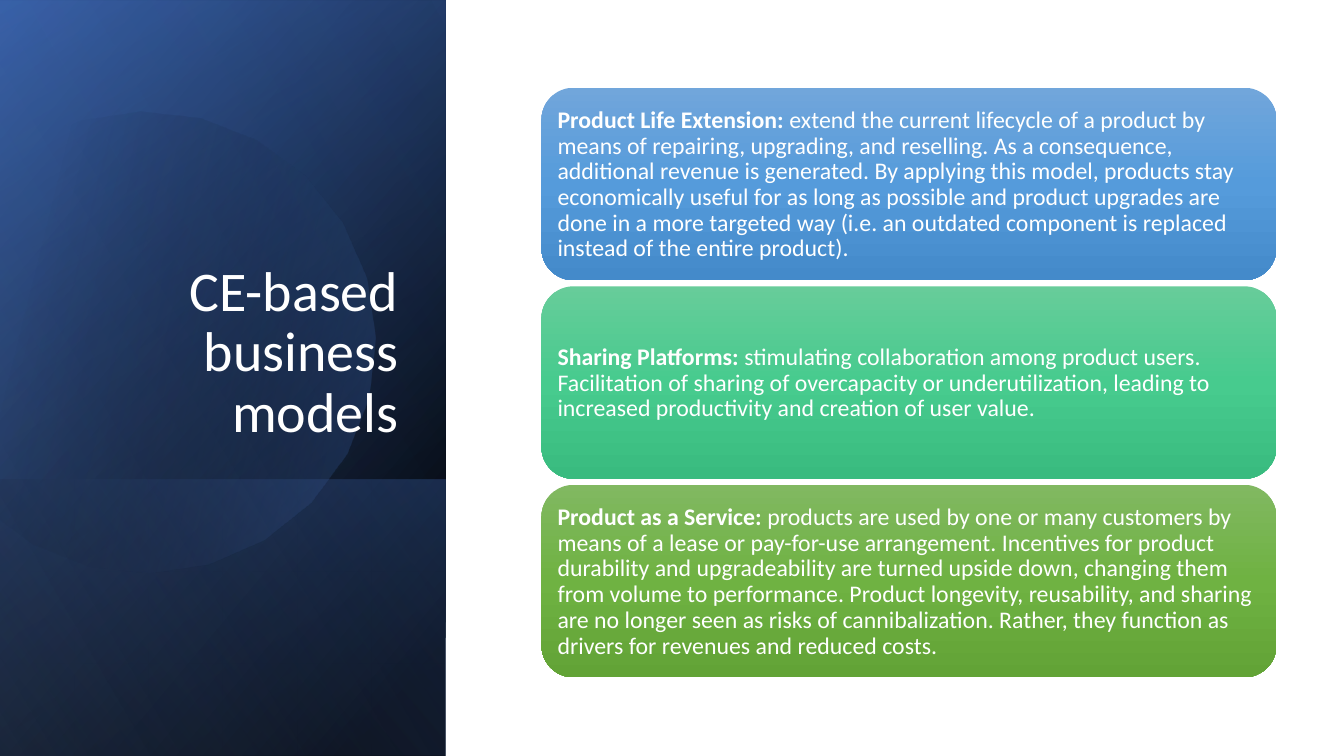
"""Build the slide on CE-based business models."""
from math import cos, radians, sin

from lxml.etree import SubElement
from pptx import Presentation
from pptx.dml.color import RGBColor
from pptx.enum.shapes import MSO_SHAPE as Preset
from pptx.enum.text import MSO_ANCHOR as Anchor, MSO_AUTO_SIZE as AutoSize, PP_ALIGN as Align
from pptx.oxml.ns import qn
from pptx.util import Inches, Pt

BLACK = RGBColor(0x00, 0x00, 0x00)
WHITE = RGBColor(0xFF, 0xFF, 0xFF)
NAVY = RGBColor(0x2F, 0x55, 0x97)
BLUE = RGBColor(0x44, 0x72, 0xC4)
PALE_BLUE = RGBColor(0x8F, 0xAA, 0xDC)
SKY_TONES = [RGBColor(0x71, 0xA6, 0xDB), RGBColor(0x55, 0x9B, 0xDB), RGBColor(0x44, 0x8A, 0xCA)]
MINT_TONES = [RGBColor(0x67, 0xCC, 0x9A), RGBColor(0x47, 0xCB, 0x8E), RGBColor(0x39, 0xBB, 0x7F)]
LEAF_TONES = [RGBColor(0x81, 0xB8, 0x61), RGBColor(0x6F, 0xB2, 0x42), RGBColor(0x62, 0xA3, 0x36)]
FONT = "Calibri"


def paint_gradient(shape, stops, angle):
    """Fill with (position, colour, opacity) stops, all in percent."""
    shape.shadow.inherit = False
    shape.line.fill.background()
    shape.fill.background()
    properties = shape.element.spPr
    blank = properties.find(qn("a:noFill"))
    gradient = SubElement(properties, qn("a:gradFill"), rotWithShape="1")
    properties.replace(blank, gradient)
    stop_list = SubElement(gradient, qn("a:gsLst"))
    for position, colour, opacity in stops:
        stop = SubElement(stop_list, qn("a:gs"), pos=str(position * 1000))
        tint = SubElement(stop, qn("a:srgbClr"), val=str(colour))
        if opacity < 100:
            SubElement(tint, qn("a:alpha"), val=str(opacity * 1000))
    SubElement(gradient, qn("a:lin"), ang=str(angle * 60000), scaled="0")


def add_panel(page, left, top, width, stops, angle):
    """Add a flipped rectangle turned upright over the left side."""
    panel = page.shapes.add_shape(
        Preset.RECTANGLE, Inches(left), Inches(top), Inches(width), Inches(4.42))
    panel.rotation = 90
    panel.element.spPr.find(qn("a:xfrm")).set("flipH", "1")
    paint_gradient(panel, stops, angle)


deck = Presentation()
deck.slide_width, deck.slide_height = Inches(13.33), Inches(7.5)
page = deck.slides.add_slide(deck.slide_layouts[5])

add_panel(page, -1.54, 1.54, 7.5, [(8, BLACK, 100), (100, NAVY, 100)], 50)
add_panel(page, -1.54, 1.55, 7.5, [(0, BLACK, 0), (99, BLUE, 46)], 30)
add_panel(page, 0.84, 3.92, 2.74, [(2, BLUE, 29), (100, BLACK, 30)], 130)

arc = [(Inches(1.43 + 2.29 * cos(radians(step))), Inches(3.35 + 2.29 * sin(radians(step))))
       for step in range(-120, 151, 15)]
builder = page.shapes.build_freeform(*arc[0])
builder.add_line_segments(arc[1:], close=True)
disc = builder.convert_to_shape()
disc.rotation = 343.9
paint_gradient(disc, [(29, BLACK, 0), (100, BLUE, 43)], 30)

add_panel(page, -1.54, 1.54, 7.5, [(0, BLACK, 0), (99, PALE_BLUE, 11)], 120)

title = page.shapes.title
title.element.getparent().append(title.element)
title.left, title.top = Inches(0.64), Inches(1.84)
title.width, title.height = Inches(3.41), Inches(2.62)
frame = title.text_frame
frame.text = "CE-based business models"
frame.word_wrap = True
frame.auto_size = AutoSize.NONE
frame.vertical_anchor = Anchor.BOTTOM
para = frame.paragraphs[0]
para.alignment = Align.RIGHT
para.line_spacing = 0.9
span = para.runs[0]
span.font.name, span.font.size = FONT, Pt(40)
span.font.color.rgb = WHITE

models = [
    ("Product Life Extension: ",
     "extend the current lifecycle of a product by means of repairing, upgrading, and "
     "reselling. As a consequence, additional revenue is generated. By applying this model, "
     "products stay economically useful for as long as possible and product upgrades are done "
     "in a more targeted way (i.e. an outdated component is replaced instead of the entire "
     "product).", SKY_TONES),
    ("Sharing Platforms: ",
     "stimulating collaboration among product users. Facilitation of sharing of overcapacity "
     "or underutilization, leading to increased productivity and creation of user value.",
     MINT_TONES),
    ("Product as a Service: ",
     "products are used by one or many customers by means of a lease or pay-for-use "
     "arrangement. Incentives for product durability and upgradeability are turned upside "
     "down, changing them from volume to performance. Product longevity, reusability, and "
     "sharing are no longer seen as risks of cannibalization. Rather, they function as drivers "
     "for revenues and reduced costs.", LEAF_TONES),
]
for row, (name, description, tones) in enumerate(models):
    top = 0.87 + 1.97 * row
    card = page.shapes.add_shape(
        Preset.ROUNDED_RECTANGLE, Inches(5.37), Inches(top), Inches(7.29), Inches(1.91))
    paint_gradient(card, zip((0, 50, 100), tones, (100, 100, 100)), 90)
    box = page.shapes.add_textbox(
        Inches(5.46), Inches(top + 0.1), Inches(7.1), Inches(1.73))
    frame = box.text_frame
    frame.word_wrap = True
    frame.vertical_anchor = Anchor.MIDDLE
    frame.margin_left = frame.margin_right = Inches(0.07)
    frame.margin_top = frame.margin_bottom = Inches(0.07)
    para = frame.paragraphs[0]
    para.alignment = Align.LEFT
    para.line_spacing = 0.9
    for text, bold in ((name, True), (description, False)):
        span = para.add_run()
        span.text = text
        span.font.name, span.font.size, span.font.bold = FONT, Pt(17), bold
        span.font.color.rgb = WHITE

deck.save("out.pptx")
